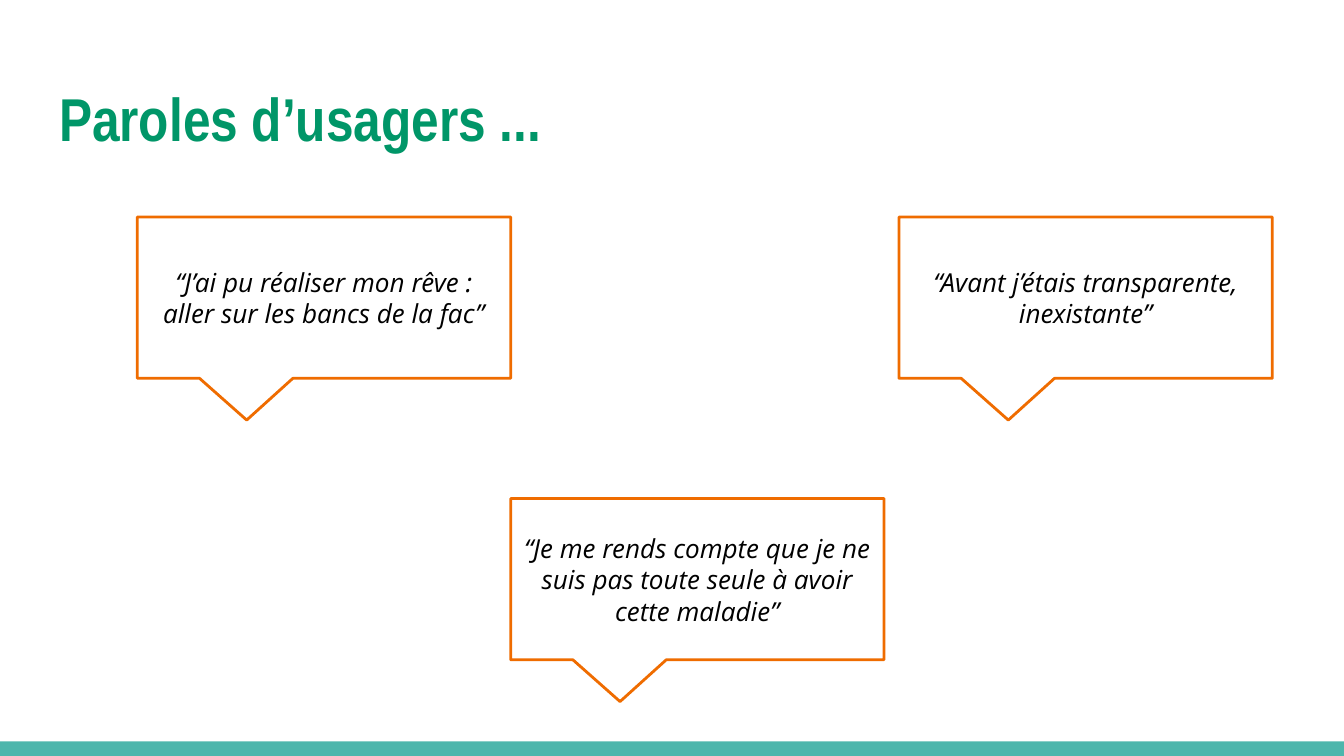
import pptx
import pptx.dml.color
import pptx.enum.shapes
import pptx.enum.text
import pptx.util
from dataclasses import dataclass

Pt = pptx.util.Pt


@dataclass(frozen=True)
class Theme:
    heading_color: str = "009668"
    quote_color: str = "000000"
    outline: str = "EF6C00"
    footer: str = "4DB6AC"
    heading_font: str = "Arial Narrow"
    quote_font: str = "Open Sans"
    heading_size: float = 32.4
    quote_size: float = 14


def rgb(code):
    return pptx.dml.color.RGBColor.from_string(code)


def write(frame, text, *, font, size, color, align, bold=False, italic=False, spacing=1.0):
    frame.word_wrap = True
    frame.auto_size = pptx.enum.text.MSO_AUTO_SIZE.NONE
    frame.vertical_anchor = pptx.enum.text.MSO_ANCHOR.MIDDLE
    frame.margin_left = frame.margin_right = Pt(7.2)
    frame.margin_top = frame.margin_bottom = Pt(7.2)
    paragraph = frame.paragraphs[0]
    paragraph.alignment = align
    paragraph.line_spacing = spacing
    run = paragraph.add_run()
    run.text = text
    run.font.name = font
    run.font.size = Pt(size)
    run.font.bold = bold
    run.font.italic = italic
    run.font.color.rgb = rgb(color)


class SlideBuilder:
    """Draws the elements of one slide in a shared style."""

    def __init__(self, slide, theme):
        self.slide = slide
        self.theme = theme

    def shape(self, kind, left, top, width, height):
        shape = self.slide.shapes.add_shape(kind, Pt(left), Pt(top), Pt(width), Pt(height))
        shape.shadow.inherit = False
        return shape

    def footer(self, top, width, height):
        band = self.shape(pptx.enum.shapes.MSO_SHAPE.RECTANGLE, 0, top, width, height)
        band.fill.solid()
        band.fill.fore_color.rgb = rgb(self.theme.footer)
        band.line.fill.background()

    def heading(self, text, left, top, width, height):
        heading = self.slide.shapes.title
        heading.left, heading.top = Pt(left), Pt(top)
        heading.width, heading.height = Pt(width), Pt(height)
        write(heading.text_frame, text, font=self.theme.heading_font,
              size=self.theme.heading_size, color=self.theme.heading_color,
              align=pptx.enum.text.PP_ALIGN.LEFT, bold=True)

    def quote(self, text, left, top, width=200, height=86.4):
        bubble = self.shape(pptx.enum.shapes.MSO_SHAPE.ROUNDED_RECTANGULAR_CALLOUT,
                            left, top, width, height)
        for index, value in enumerate((-0.207, 0.759, 0)):
            bubble.adjustments[index] = value
        bubble.fill.background()
        bubble.line.color.rgb = rgb(self.theme.outline)
        bubble.line.width = Pt(1.5)
        write(bubble.text_frame, text, font=self.theme.quote_font,
              size=self.theme.quote_size, color=self.theme.quote_color,
              align=pptx.enum.text.PP_ALIGN.CENTER, italic=True)


def main():
    deck = pptx.Presentation()
    deck.slide_width, deck.slide_height = Pt(720), Pt(405)
    builder = SlideBuilder(deck.slides.add_slide(deck.slide_layouts[5]), Theme())
    builder.footer(397.2, 720, 7.8)
    builder.heading("Paroles d’usagers ...", 24.5, 35.3, 671, 55.4)
    upper, lower = 116.3, 267.1
    quotes = (
        ("“J’ai pu réaliser mon rêve : aller sur les bancs de la fac”", 73.6, upper),
        ("“Je me rends compte que je ne suis pas toute seule à avoir cette maladie”", 273.6, lower),
        ("“Avant j’étais transparente, inexistante”", 481.6, upper),
    )
    for text, left, top in quotes:
        builder.quote(text, left, top)
    deck.save("out.pptx")


if __name__ == "__main__":
    main()
